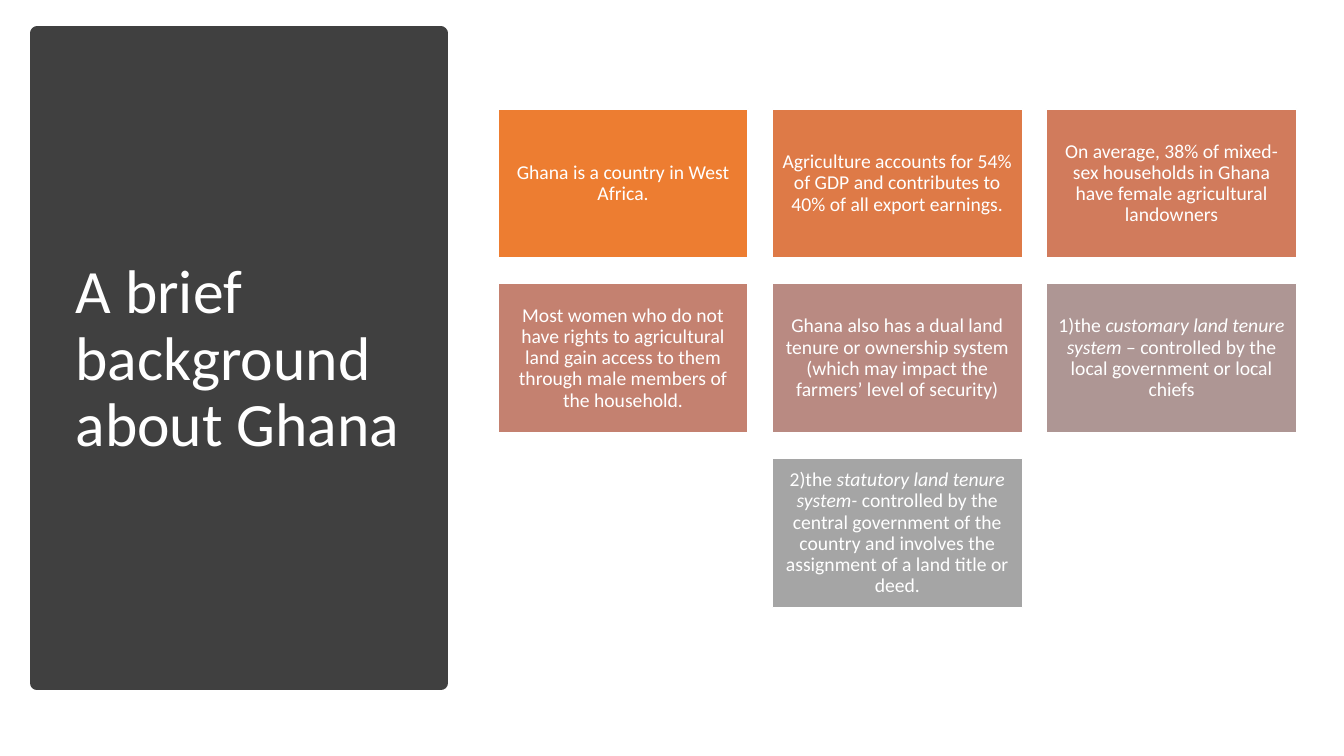
from dataclasses import dataclass
from pptx import Presentation
from pptx.dml.color import RGBColor
from pptx.enum.shapes import MSO_SHAPE
from pptx.enum.text import MSO_ANCHOR, MSO_AUTO_SIZE, PP_ALIGN
from pptx.util import Inches, Pt


@dataclass(frozen=True)
class Theme:
    font: str = "Calibri"
    head: int = 44
    body: int = 14
    dark: str = "404040"
    light: str = "FFFFFF"
    cards: tuple = ("ED7D31", "DE7A47", "D17B5C", "C48170",
                    "B98A82", "AE9694", "A5A5A5")


THEME = Theme()

# Each fact is a list of runs; every second run is italic
FACTS = [
    ["Ghana is a country in West Africa."],
    ["Agriculture accounts for 54% of GDP and contributes to 40% of all "
     "export earnings."],
    ["On average, 38% of mixed-sex households in Ghana have female "
     "agricultural landowners"],
    ["Most women who do not have rights to agricultural land gain access to "
     "them through male members of the household."],
    ["Ghana also has a dual land tenure or ownership system (which may impact "
     "the farmers’ level of security)"],
    ["1)the ", "customary land tenure system ",
     "– controlled by the local government or local chiefs"],
    ["2)the ", "statutory land tenure system- ",
     "controlled by the central government of the country and involves the "
     "assignment of a land title or deed."],
]


def apply(item, form):
    for name, value in form.items():
        setattr(item, name, value)


def add_box(slide, box, fill, line, width):
    shape = slide.shapes.add_shape(MSO_SHAPE.RECTANGLE, *map(Inches, box))
    shape.shadow.inherit = False
    shape.fill.solid()
    shape.fill.fore_color.rgb = RGBColor.from_string(fill)
    shape.line.color.rgb = RGBColor.from_string(line)
    shape.line.width = Pt(width)
    return shape


def write(shape, runs, size, align, inset):
    frame = shape.text_frame
    apply(frame, {"word_wrap": True, "auto_size": MSO_AUTO_SIZE.NONE,
                  "vertical_anchor": MSO_ANCHOR.MIDDLE})
    apply(frame, {f"margin_{side}": Inches(inset)
                  for side in ("left", "top", "right", "bottom")})
    para = frame.paragraphs[0]
    apply(para, {"alignment": align, "line_spacing": 0.9})
    for i, text in enumerate(runs):
        run = para.add_run()
        run.text = text
        apply(run.font, {"name": THEME.font, "size": Pt(size),
                         "italic": i % 2 == 1})
        run.font.color.rgb = RGBColor.from_string(THEME.light)


# Dark title panel
def add_panel(slide, box):
    left, top, wide, high = box
    panel = add_box(slide, box, THEME.dark, THEME.dark, 10)
    title = slide.shapes.title
    apply(title, {"left": Inches(left + 0.28), "top": Inches(top + 0.37),
                  "width": Inches(wide - 0.54), "height": Inches(high - 0.7)})
    write(title, ["A brief background about Ghana"], THEME.head,
          PP_ALIGN.LEFT, 0.1)
    title.element.addprevious(panel.element)  # panel goes behind the title


# Grid of fact cards, with a short last row centred
def add_cards(slide, box, cols=3, gap=0.24, high=1.48):
    left, top, wide, tall = box
    rows = -(-len(FACTS) // cols)
    width = (wide - gap * (cols - 1)) / cols
    down = (tall - high) / (rows - 1)
    for i, (runs, fill) in enumerate(zip(FACTS, THEME.cards)):
        row, col = divmod(i, cols)
        count = min(cols, len(FACTS) - row * cols)
        x = left + (col + (cols - count) / 2) * (width + gap)
        card = add_box(slide, (x, top + row * down, width, high),
                       fill, THEME.light, 1)
        write(card, runs, THEME.body, PP_ALIGN.CENTER, 0.06)


def main():
    deck = Presentation()
    apply(deck, {"slide_width": Inches(13.33), "slide_height": Inches(7.5)})
    slide = deck.slides.add_slide(deck.slide_layouts[5])
    add_panel(slide, (0.37, 0.33, 4, 6.45))
    add_cards(slide, (4.94, 1.08, 7.92, 4.95))
    deck.save("out.pptx")


if __name__ == "__main__":
    main()
